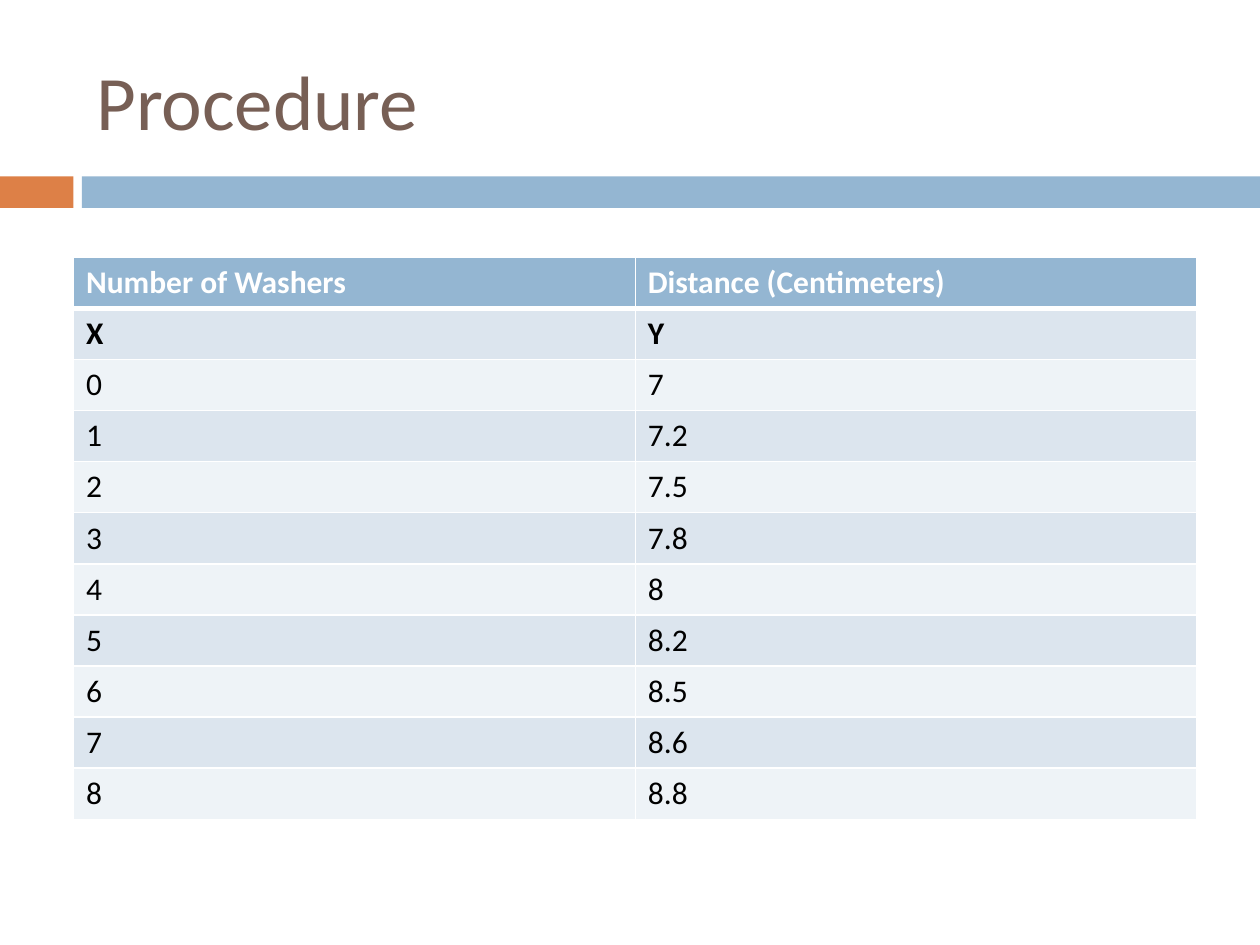
from dataclasses import dataclass

from lxml.etree import SubElement
from pptx import Presentation
from pptx.dml.color import RGBColor as RGB
from pptx.enum.shapes import MSO_SHAPE as Shape
from pptx.enum.text import MSO_ANCHOR as Anchor
from pptx.oxml.ns import qn
from pptx.util import Pt


@dataclass(frozen=True)
class Theme:
    font: str = "Calibri"
    title_size: int = 44
    body_size: int = 18
    title: str = "775F55"
    accent: str = "DD8047"
    blue: str = "94B6D2"
    bands: tuple = ("DCE5EE", "EEF3F7")
    white: str = "FFFFFF"
    black: str = "000000"


T = Theme()

ROWS = [
    ("Number of Washers", "Distance (Centimeters)"),
    ("X", "Y"),
    ("0", "7"),
    ("1", "7.2"),
    ("2", "7.5"),
    ("3", "7.8"),
    ("4", "8"),
    ("5", "8.2"),
    ("6", "8.5"),
    ("7", "8.6"),
    ("8", "8.8"),
]


def add_run(p, text, size, color, bold=False):
    r = p.add_run()
    r.text = text
    r.font.name = T.font
    r.font.size = Pt(size)
    r.font.bold = bold
    r.font.color.rgb = RGB.from_string(color)


def fill_solid(fill, color):
    fill.solid()
    fill.fore_color.rgb = RGB.from_string(color)


def set_borders(cell, color, bottom):
    tc_pr = cell._tc.get_or_add_tcPr()
    for side, width in (("L", 1), ("R", 1), ("T", 1), ("B", bottom)):
        ln = SubElement(tc_pr, qn(f"a:ln{side}"), w=str(Pt(width)))
        SubElement(SubElement(ln, qn("a:solidFill")), qn("a:srgbClr"), val=color)


def add_title(s, text, x, y, w, h):
    tf = s.shapes.add_textbox(Pt(x), Pt(y), Pt(w), Pt(h)).text_frame
    tf.word_wrap = True
    tf.vertical_anchor = Anchor.MIDDLE
    add_run(tf.paragraphs[0], text, T.title_size, T.title)


def add_divider(s, x, y, w, h, tab=42, gap=4.8):
    # Short tab, then the long bar filling the rest of the width
    start = tab + gap
    for left, width, color in ((x, tab, T.accent), (x + start, w - start, T.blue)):
        sp = s.shapes.add_shape(Shape.RECTANGLE, Pt(left), Pt(y), Pt(width), Pt(h))
        sp.shadow.inherit = False
        fill_solid(sp.fill, color)
        sp.line.fill.background()


def add_data_table(s, rows, x, y, w, h):
    n_cols = len(rows[0])
    table = s.shapes.add_table(len(rows), n_cols, Pt(x), Pt(y), Pt(w), Pt(h)).table
    for col in table.columns:
        col.width = Pt(w / n_cols)
    for i, values in enumerate(rows):
        table.rows[i].height = Pt(h / len(rows))
        header = i == 0
        fill = T.blue if header else T.bands[(i - 1) % 2]
        color = T.white if header else T.black
        for j, value in enumerate(values):
            cell = table.cell(i, j)
            set_borders(cell, T.white, bottom=3 if header else 1)
            if i == 1:  # shares the thick rule under the header
                cell._tc.tcPr.find(qn("a:lnT")).set("w", str(Pt(3)))
            fill_solid(cell.fill, fill)
            add_run(cell.text_frame.paragraphs[0], value, T.body_size, color, bold=i < 2)


def main():
    prs = Presentation()
    prs.slide_width, prs.slide_height = Pt(720), Pt(540)
    s = prs.slides.add_slide(prs.slide_layouts[6])

    # Divider band, heading, measurements
    add_divider(s, 0, 100.8, 720, 18)
    add_title(s, "Procedure", 48, 18, 642, 78)
    add_data_table(s, ROWS, 42, 147, 642, 321.2)

    prs.save("out.pptx")


if __name__ == "__main__":
    main()
